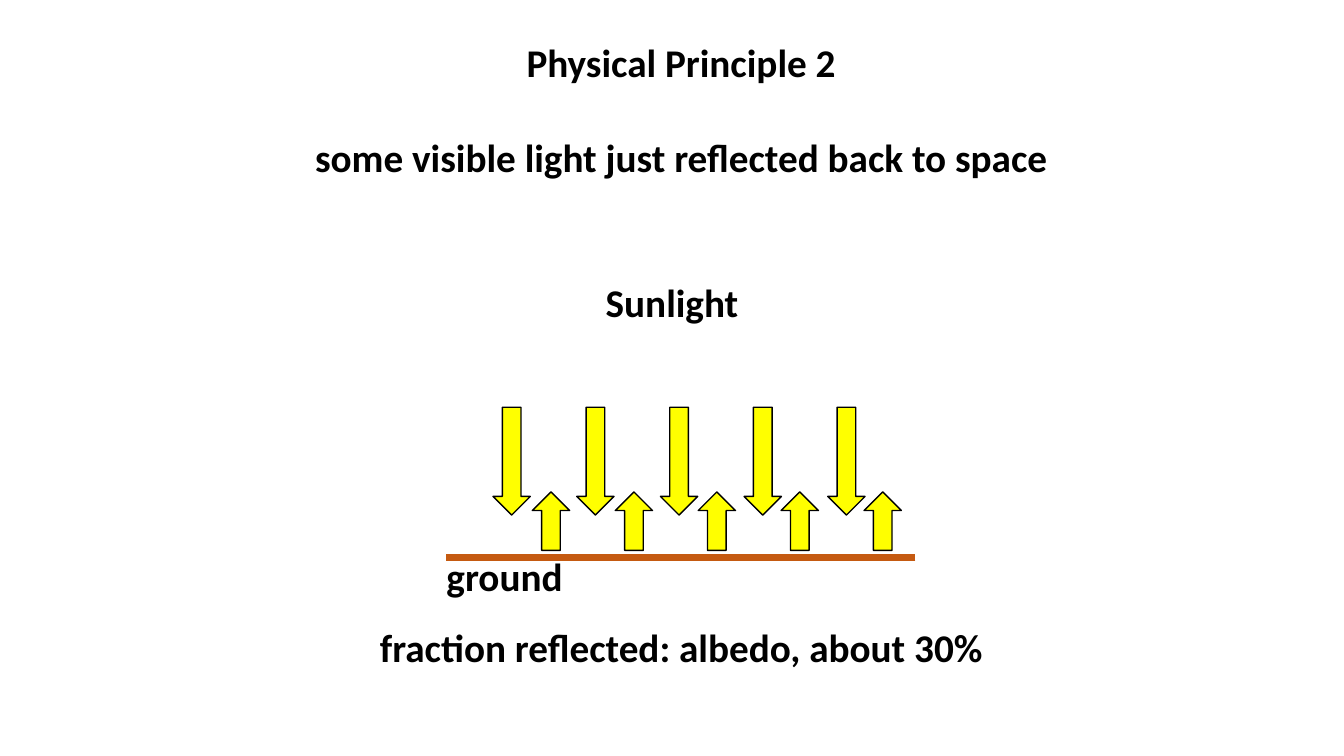
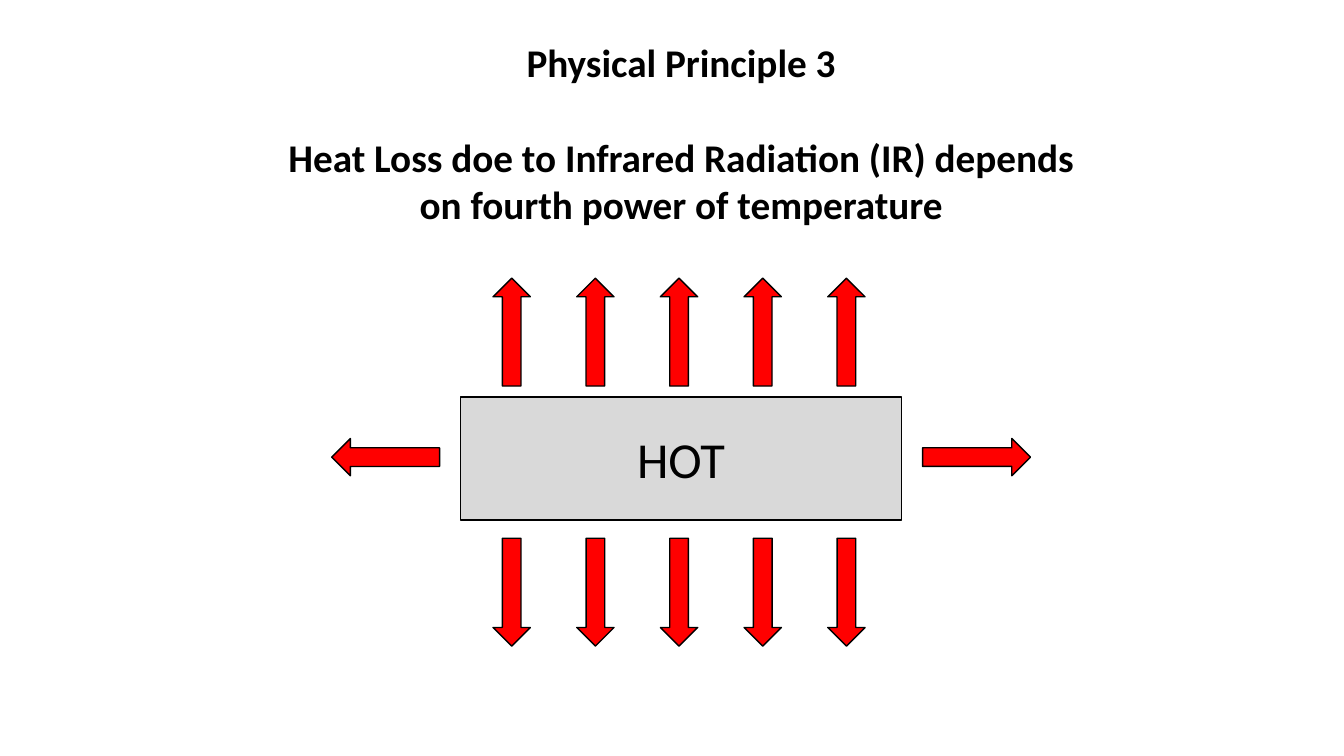
from dataclasses import dataclass
from lxml.etree import SubElement
from pptx import Presentation
from pptx.dml.color import RGBColor as Rgb
from pptx.enum.shapes import MSO_CONNECTOR as Conn, MSO_SHAPE as Kind
from pptx.enum.text import MSO_ANCHOR as Anchor, PP_ALIGN as Align
from pptx.oxml.ns import qn
from pptx.util import Pt

PX = 9144  # EMU in one px, 100 px to the inch


@dataclass(frozen=True)
class Theme:
    font: str = "Calibri"
    ink: str = "000000"
    sun: str = "FFFF00"
    heat: str = "FF0000"
    soil: str = "C55A11"
    block: str = "D9D9D9"
    body: int = 28
    big: int = 36
    gap: int = 34  # space below a heading, pt
    thin: float = 1
    thick: float = 4.5


T = Theme()


@dataclass(frozen=True)
class Box:
    x: int
    y: int
    w: int
    h: int

    def emu(self):
        return [round(n * PX) for n in (self.x, self.y, self.w, self.h)]


def put(item, **vals):
    for name, val in vals.items():
        setattr(item, name, val)


# Basic parts
def write(frame, lines, size=T.body, bold=True, align=Align.CENTER):
    frame.word_wrap = True
    for i, line in enumerate(lines):
        para = frame.add_paragraph() if i else frame.paragraphs[0]
        para.alignment = align
        run = para.add_run()
        run.text = line
        put(run.font, name=T.font, size=Pt(size), bold=bold)
        run.font.color.rgb = Rgb.from_string(T.ink)


def label(slide, box, *lines, align=Align.CENTER):
    frame = slide.shapes.add_textbox(*box.emu()).text_frame
    write(frame, lines, align=align)
    return frame


def shape(shapes, kind, box, fill):
    item = shapes.add_shape(kind, *box.emu())
    item.shadow.inherit = False
    item.fill.solid()
    item.fill.fore_color.rgb = Rgb.from_string(fill)
    item.line.color.rgb = Rgb.from_string(T.ink)
    item.line.width = Pt(T.thin)
    return item


def arrow(shapes, box, fill, turn=0):
    shape(shapes, Kind.UP_ARROW, box, fill).rotation = turn


def row(slide, box, fill, turn=0, count=5, wide=37):
    """Spread equal arrows from edge to edge of the box."""
    group = slide.shapes.add_group_shape()
    step = (box.w - wide) / (count - 1)
    for i in range(count):
        arrow(group.shapes, Box(box.x + i * step, box.y, wide, box.h), fill, turn)


def heading(slide, box, title, *lines):
    frame = label(slide, box, title, *lines)
    frame.paragraphs[0].space_after = Pt(T.gap)


# Sunlight falling on the ground and going back up
def sunlit(slide, box):
    row(slide, Box(box.x + 47, box.y, 369, 107), T.sun, 180)
    base = box.y + box.h
    ends = [n * PX for n in (box.x + box.w, base, box.x, base)]
    ground = slide.shapes.add_connector(Conn.STRAIGHT, *ends)
    ground.line.color.rgb = Rgb.from_string(T.soil)
    ground.line.width = Pt(T.thick)
    SubElement(ground._element.spPr, qn("a:effectLst"))
    label(slide, Box(box.x - 9, base - 10, 151, 104), "ground", align=Align.LEFT)
    row(slide, Box(box.x + 86, base - 65, 366, 58), T.sun)


# Hot block that radiates on all four sides
def hot(slide, box):
    block = shape(slide.shapes, Kind.RECTANGLE, box, T.block)
    block.text_frame.vertical_anchor = Anchor.MIDDLE
    write(block.text_frame, ["HOT"], T.big, False)
    wide, tall = 37, 107
    left, span = box.x + 32, 369
    row(slide, Box(left, box.y - 11 - tall, span, tall), T.heat)
    row(slide, Box(left, box.y + box.h + 18, span, tall), T.heat, 180)
    reach = 21 + tall / 2
    mid = box.y + 6
    for side, turn in ((box.x + box.w + reach, 90), (box.x - reach, 270)):
        arrow(slide.shapes, Box(side - wide / 2, mid, wide, tall), T.heat, turn)


def albedo(slide):
    heading(slide, Box(85, 33, 1181, 199), "Physical Principle 2",
            "some visible light just reflected back to space")
    sunlit(slide, Box(442, 404, 466, 149))
    label(slide, Box(76, 271, 1181, 104), "Sunlight")
    label(slide, Box(85, 613, 1181, 104), "fraction reflected: albedo, about 30%")


def loss(slide):
    heading(slide, Box(85, 33, 1181, 246), "Physical Principle 3",
            "Heat Loss doe to Infrared Radiation (IR) depends",
            "on fourth power of temperature")
    hot(slide, Box(457, 394, 437, 122))


def main():
    deck = Presentation()
    put(deck, slide_width=1333 * PX, slide_height=750 * PX)
    for build in (albedo, loss):
        build(deck.slides.add_slide(deck.slide_layouts[6]))
    deck.save("out.pptx")


if __name__ == "__main__":
    main()
